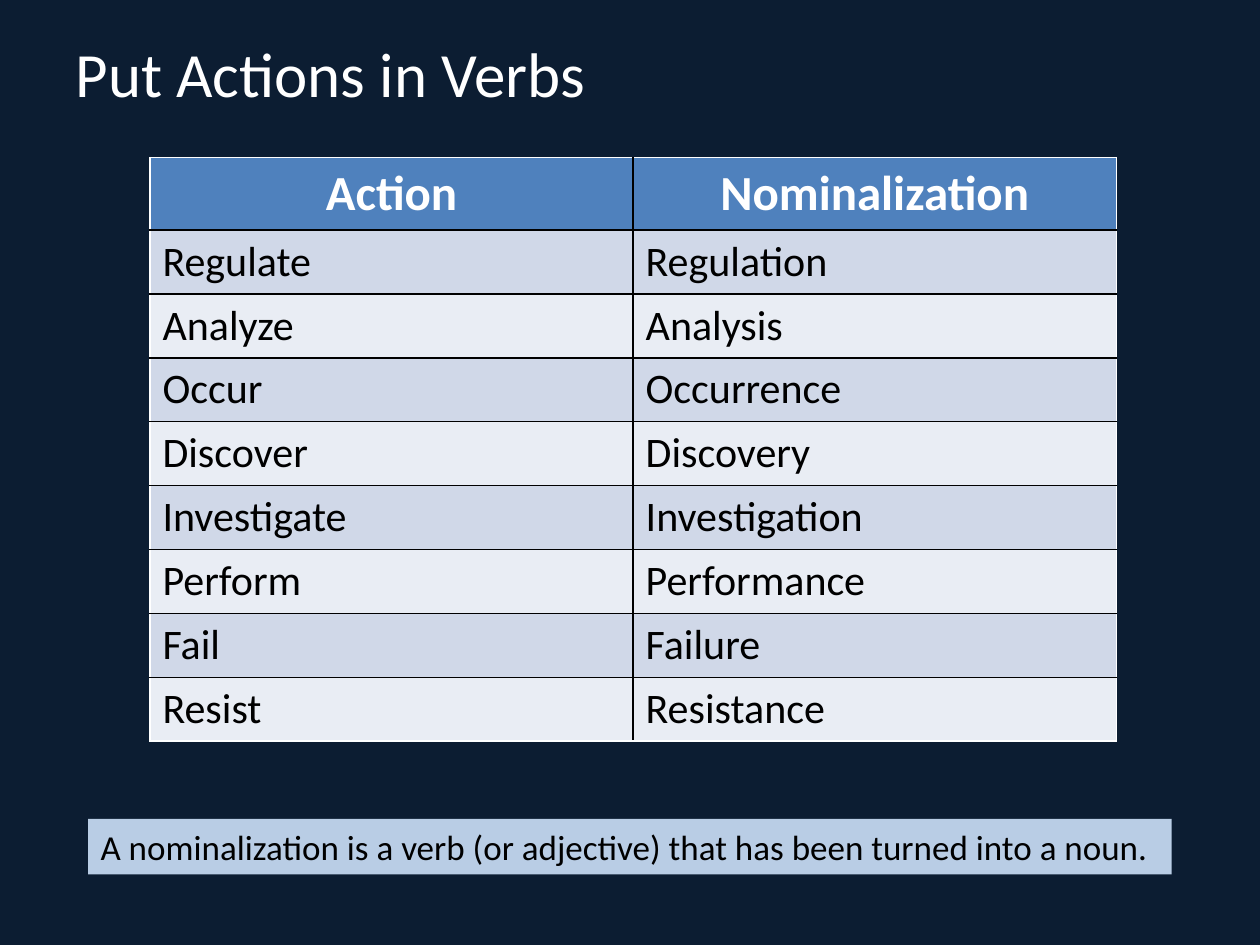
from lxml import etree
from pptx import Presentation
from pptx.dml.color import RGBColor
from pptx.enum.text import MSO_ANCHOR, MSO_AUTO_SIZE, PP_ALIGN
from pptx.oxml.ns import qn
from pptx.util import Inches, Pt

LEFT, CENTER = PP_ALIGN.LEFT, PP_ALIGN.CENTER
MIDDLE = MSO_ANCHOR.MIDDLE
FIT_SHAPE = MSO_AUTO_SIZE.SHAPE_TO_FIT_TEXT

NAVY = RGBColor(0x0C, 0x1D, 0x32)
WHITE = RGBColor(0xFF, 0xFF, 0xFF)
BLACK = RGBColor(0x00, 0x00, 0x00)
HEADER_BLUE = RGBColor(0x4F, 0x81, 0xBD)
BANDS = RGBColor(0xD0, 0xD8, 0xE8), RGBColor(0xE9, 0xED, 0xF4)
NOTE_BLUE = RGBColor(0xB9, 0xCD, 0xE5)

FONT = "Calibri"
ROW_HEIGHT = Inches(0.41)
WORDS = [
    ("Action", "Nominalization"),
    ("Regulate", "Regulation"),
    ("Analyze", "Analysis"),
    ("Occur", "Occurrence"),
    ("Discover", "Discovery"),
    ("Investigate", "Investigation"),
    ("Perform", "Performance"),
    ("Fail", "Failure"),
    ("Resist", "Resistance"),
]


def write(tf, text, size, color, align=LEFT, bold=False):
    p = tf.paragraphs[0]
    p.alignment = align
    r = p.add_run()
    r.text = text
    r.font.color.rgb = color
    for name, value in {"name": FONT, "size": Pt(size), "bold": bold}.items():
        setattr(r.font, name, value)


def set_border(cell, side, color):
    tcPr = cell._tc.get_or_add_tcPr()
    ln = etree.SubElement(tcPr, qn("a:ln" + side), w=str(Pt(1)))
    fill = etree.SubElement(ln, qn("a:solidFill"))
    etree.SubElement(fill, qn("a:srgbClr"), val=str(color))


def add_title(s, box, text):
    sp = s.shapes.title
    sp.left, sp.top, sp.width, sp.height = box
    tf = sp.text_frame
    tf.vertical_anchor = MIDDLE
    write(tf, text, 36, WHITE)


def add_word_table(s, box, words):
    last_row, last_col = len(words) - 1, len(words[0]) - 1
    table = s.shapes.add_table(len(words), len(words[0]), *box).table
    for i, row in enumerate(words):
        table.rows[i].height = ROW_HEIGHT
        for j, text in enumerate(row):
            cell = table.cell(i, j)
            outer = {"L": j == 0, "R": j == last_col, "T": i == 0, "B": i == last_row}
            for side, is_outer in outer.items():
                set_border(cell, side, WHITE if is_outer else BLACK)
            cell.fill.solid()
            if i == 0:
                cell.fill.fore_color.rgb = HEADER_BLUE
                write(cell.text_frame, text, 28, WHITE, CENTER, True)
            else:
                cell.fill.fore_color.rgb = BANDS[(i - 1) % 2]
                write(cell.text_frame, text, 24, BLACK)


def add_definition(s, box, text):
    sp = s.shapes.add_textbox(*box)
    sp.fill.solid()
    sp.fill.fore_color.rgb = NOTE_BLUE
    tf = sp.text_frame
    tf.word_wrap = False
    tf.auto_size = FIT_SHAPE
    write(tf, text, 20, BLACK)


def main():
    prs = Presentation()
    prs.slide_width, prs.slide_height = Inches(10), Inches(7.5)
    s = prs.slides.add_slide(prs.slide_layouts[5])
    s.background.fill.solid()
    s.background.fill.fore_color.rgb = NAVY

    add_title(s, (Inches(0.5), Inches(-0.05), Inches(9), Inches(1.25)),
              "Put Actions in Verbs")
    add_word_table(s, (Inches(1.19), Inches(1.25), Inches(7.67), Inches(4.57)), WORDS)
    add_definition(s, (Inches(0.7), Inches(6.5), Inches(8.6), Inches(0.44)),
                   "A nominalization is a verb (or adjective) that has been turned into a noun.")
    prs.save("out.pptx")


if __name__ == "__main__":
    main()
